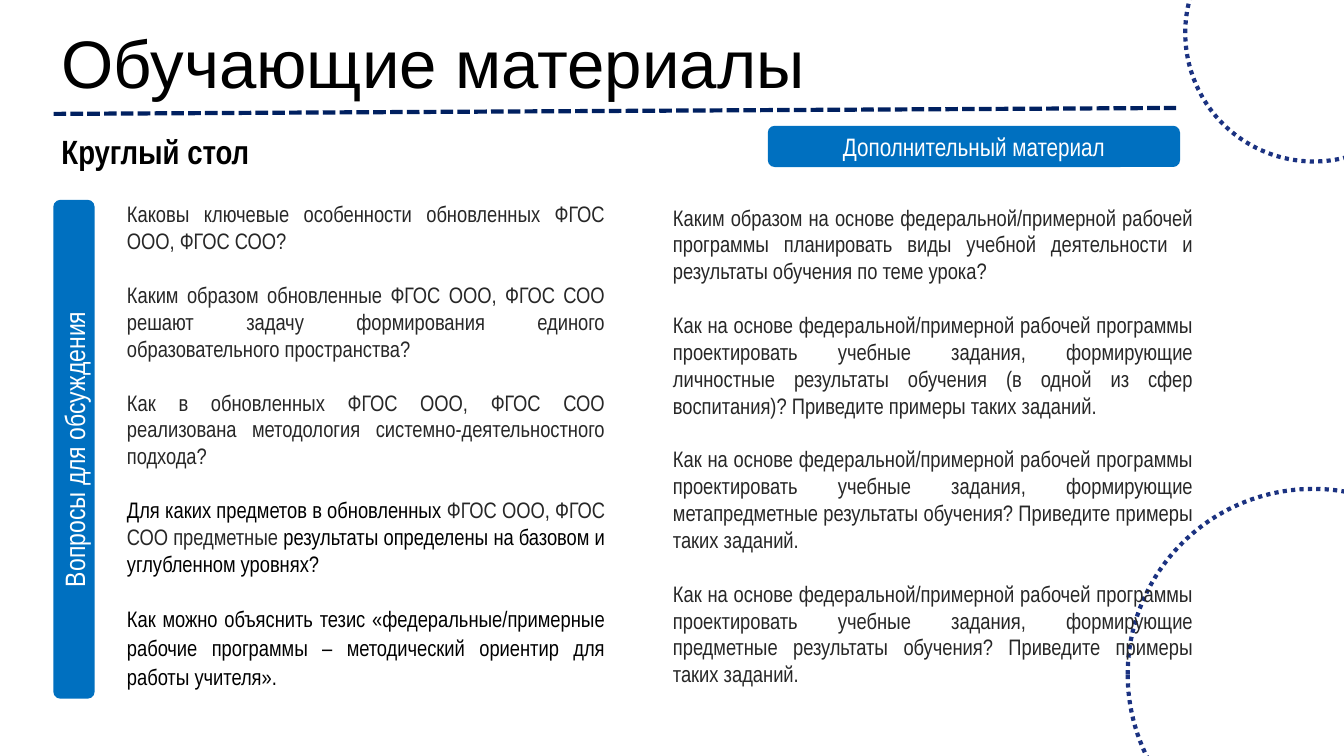
"""Build the round table slide with discussion questions."""
from pptx import Presentation
from pptx.dml.color import RGBColor
from pptx.enum.dml import MSO_LINE
from pptx.enum.shapes import MSO_CONNECTOR, MSO_SHAPE
from pptx.enum.text import MSO_ANCHOR, MSO_AUTO_SIZE, PP_ALIGN
from pptx.oxml.ns import qn
from pptx.util import Cm, Pt
from lxml.etree import SubElement

BLACK = RGBColor(0x00, 0x00, 0x00)
GREY = RGBColor(0x27, 0x27, 0x27)
WHITE = RGBColor(0xFF, 0xFF, 0xFF)
BLUE = RGBColor(0x00, 0x70, 0xC0)
NAVY = RGBColor(0x00, 0x20, 0x60)
INDIGO = RGBColor(0x1B, 0x32, 0x81)
NARROW = "Arial Narrow"


def add_run(p, text, size, color, font=NARROW, bold=False):
    r = p.add_run()
    r.text = text
    r.font.name = font
    r.font.size = Pt(size)
    r.font.bold = bold
    r.font.color.rgb = color


def add_text_frame(s, left, top, width, height, wrap=True):
    tf = s.shapes.add_textbox(Cm(left), Cm(top), Cm(width), Cm(height)).text_frame
    tf.word_wrap = wrap
    tf.auto_size = MSO_AUTO_SIZE.SHAPE_TO_FIT_TEXT
    return tf


prs = Presentation()
prs.slide_width, prs.slide_height = Cm(33.87), Cm(19.05)
s = prs.slides.add_slide(prs.slide_layouts[6])

tf = add_text_frame(s, 1.3, 0.41, 29.36, 2.31)
add_run(tf.paragraphs[0], "Обучающие материалы", 48, BLACK, "Arial")

for left, top, diameter in [(28.42, 12.32, 9.35), (29.87, -2.41, 6.48)]:
    sp = s.shapes.add_shape(MSO_SHAPE.OVAL, Cm(left), Cm(top), Cm(diameter), Cm(diameter))
    sp.shadow.inherit = False
    sp.fill.background()
    sp.line.color.rgb = INDIGO
    sp.line.width = Pt(3)
    sp.line.dash_style = MSO_LINE.ROUND_DOT

rule = s.shapes.add_connector(MSO_CONNECTOR.STRAIGHT, Cm(1.35), Cm(2.87), Cm(29.64), Cm(2.72))
rule.line.color.rgb = NAVY
rule.line.width = Pt(3)
rule.line.dash_style = MSO_LINE.SQUARE_DOT
SubElement(rule.element.spPr, qn("a:effectLst"))

tf = add_text_frame(s, 1.3, 3.17, 5.36, 1.27, wrap=False)
add_run(tf.paragraphs[0], "Круглый стол", 24, BLACK, bold=True)

labels = [
    ("Дополнительный материал", 18, 19.35, 3.17, 10.39, 0),
    ("Вопросы для обсуждения", 20, -4.42, 10.8, 12.57, 270),
]
for text, size, left, top, width, rotation in labels:
    sp = s.shapes.add_shape(MSO_SHAPE.ROUNDED_RECTANGLE, Cm(left), Cm(top), Cm(width), Cm(1.04))
    sp.shadow.inherit = False
    sp.rotation = rotation
    sp.fill.solid()
    sp.fill.fore_color.rgb = BLUE
    sp.line.fill.background()
    tf = sp.text_frame
    tf.word_wrap = True
    tf.vertical_anchor = MSO_ANCHOR.MIDDLE
    p = tf.paragraphs[0]
    p.alignment = PP_ALIGN.CENTER
    add_run(p, text, size, WHITE)

discussion = [
    [("Каковы ключевые особенности обновленных ФГОС ООО, ФГОС СОО?", GREY)],
    [("Каким образом обновленные ФГОС ООО, ФГОС СОО решают задачу формирования "
      "единого образовательного пространства?", GREY)],
    [("Как в обновленных ФГОС ООО, ФГОС СОО реализована методология "
      "системно-деятельностного подхода?", GREY)],
    [("Для каких предметов в обновленных ", BLACK),
     ("ФГОС ООО, ФГОС СОО предметные ", GREY),
     ("результаты определены на базовом и углубленном уровнях?", BLACK)],
    [("Как можно объяснить тезис «федеральные/примерные рабочие программы – "
      "методический ориентир для работы учителя».", BLACK)],
]
additional = [
    [("Каким образом на основе федеральной/примерной рабочей программы планировать "
      "виды учебной деятельности и результаты обучения по теме урока?", GREY)],
]
for outcome in [
    "личностные результаты обучения (в одной из сфер воспитания)?",
    "метапредметные результаты обучения?",
    "предметные результаты обучения?",
]:
    additional.append([(
        "Как на основе федеральной/примерной рабочей программы проектировать учебные "
        f"задания, формирующие {outcome} Приведите примеры таких заданий.", GREY)])

columns = [
    (discussion, 2.95, 4.93, 12.55, 12.75),
    (additional, 16.71, 5.01, 13.61, 12.6),
]
for questions, left, top, width, height in columns:
    tf = add_text_frame(s, left, top, width, height)
    for i, runs in enumerate(questions):
        p = tf.paragraphs[0] if i == 0 else tf.add_paragraph()
        p.alignment = PP_ALIGN.JUSTIFY
        if i:
            p.space_before = Pt(19.2)
        for text, color in runs:
            add_run(p, text, 16, color)
    if questions is discussion:
        p.line_spacing = 1.07

prs.save("out.pptx")
